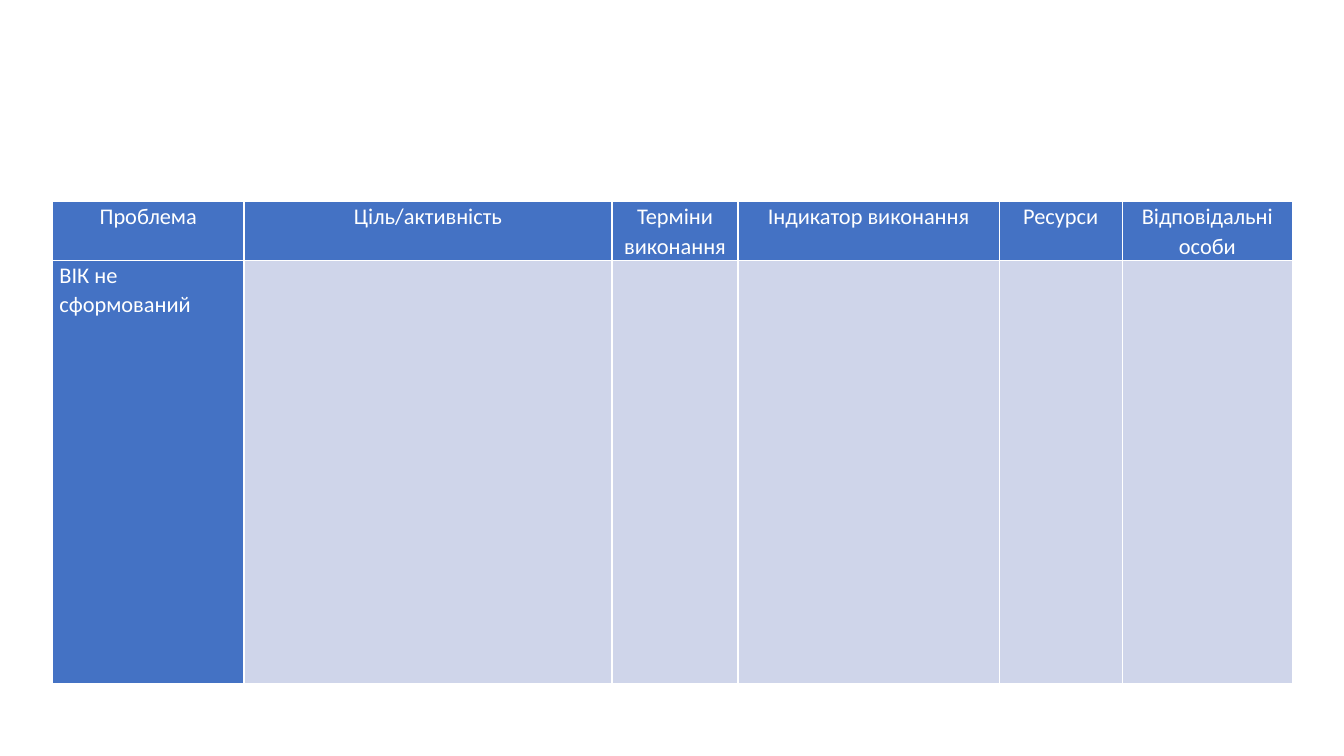
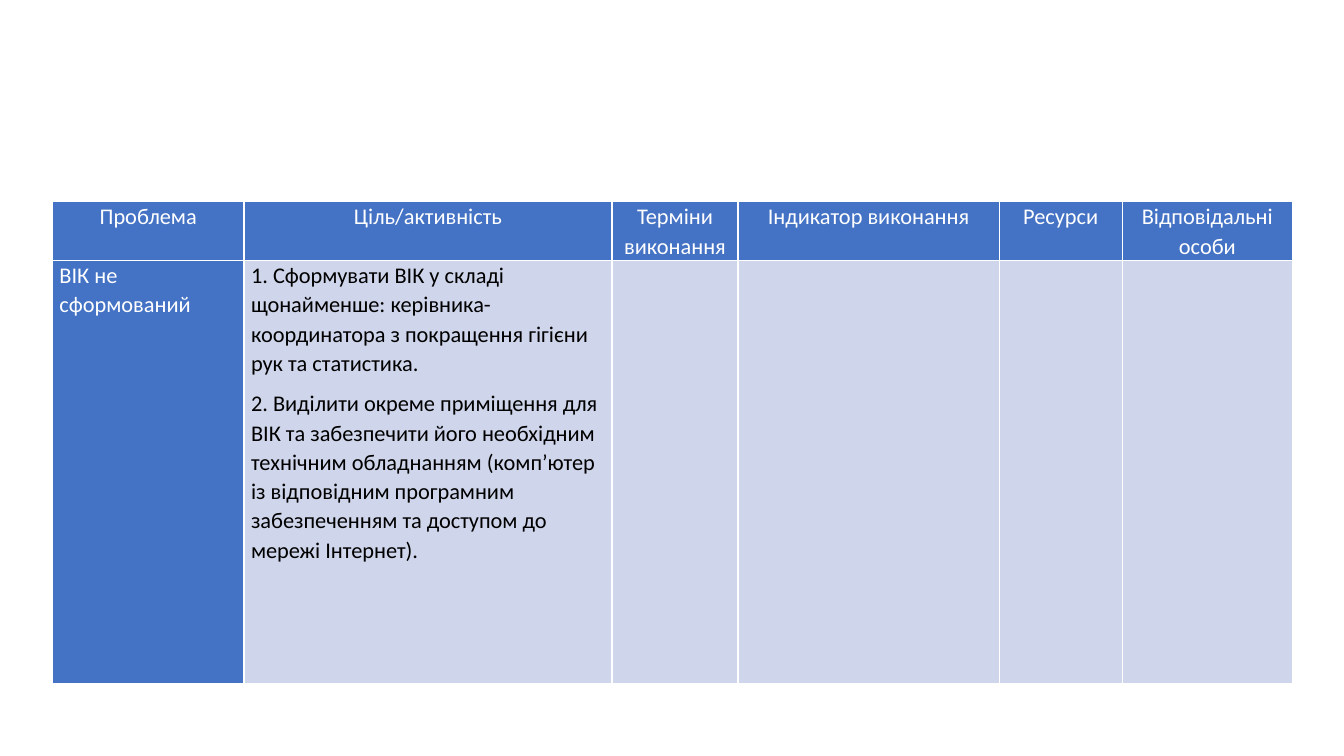
from lxml.etree import SubElement
from pptx import Presentation
from pptx.dml.color import RGBColor
from pptx.enum.text import PP_ALIGN
from pptx.oxml.ns import qn
from pptx.util import Inches, Pt

# Shared style
BLUE = RGBColor(0x44, 0x72, 0xC4)
PALE = RGBColor(0xCF, 0xD5, 0xEA)
WHITE = RGBColor(0xFF, 0xFF, 0xFF)
BLACK = RGBColor(0, 0, 0)
FONT, SIZE = "Calibri", Pt(16)
LEFT, TOP = 0.52, 2
ROW_HEIGHTS = (0.56, 4.2)

# Content: (heading, column width)
COLUMNS = [
    ("Проблема", 1.9),
    ("Ціль/активність", 3.65),
    ("Терміни виконання", 1.25),
    ("Індикатор виконання", 2.59),
    ("Ресурси", 1.22),
    ("Відповідальні особи", 1.69),
]
PROBLEM = "ВІК не сформований"
ACTIVITIES = [
    "1. Сформувати ВІК у складі щонайменше: керівника-координатора "
    "з покращення гігієни рук та статистика.",
    "2. Виділити окреме приміщення для ВІК та забезпечити його необхідним "
    "технічним обладнанням (комп’ютер із відповідним програмним "
    "забезпеченням та доступом до мережі Інтернет).",
]
# Activities shown on each slide
SLIDES = [[], ACTIVITIES]


def add_borders(cell):
    tc_pr = cell._tc.get_or_add_tcPr()
    for side in ("a:lnL", "a:lnR", "a:lnT", "a:lnB"):
        ln = SubElement(tc_pr, qn(side), w=str(Pt(1)))
        fill = SubElement(ln, qn("a:solidFill"))
        SubElement(fill, qn("a:srgbClr"), val=str(WHITE))


def fill_cell(cell, lines, fill, color, align):
    add_borders(cell)
    cell.fill.solid()
    cell.fill.fore_color.rgb = fill
    cell.margin_left = cell.margin_right = Inches(0.07)
    cell.margin_top = cell.margin_bottom = 0
    tf = cell.text_frame
    tf.text = "\n".join(lines)
    for p in tf.paragraphs:
        p.alignment = align
        p.line_spacing = 1.07
        p.space_after = Pt(8)
        p.font.name, p.font.size = FONT, SIZE
        p.font.color.rgb = color


def add_plan(prs, activities):
    s = prs.slides.add_slide(prs.slide_layouts[6])
    width = sum(w for _, w in COLUMNS)
    table = s.shapes.add_table(
        len(ROW_HEIGHTS), len(COLUMNS), Inches(LEFT), Inches(TOP),
        Inches(width), Inches(sum(ROW_HEIGHTS))).table
    table.first_row = table.horz_banding = False
    for row, height in zip(table.rows, ROW_HEIGHTS):
        row.height = Inches(height)

    # Heading above, problem and activities below
    body = {0: [PROBLEM], 1: activities}
    for c, (heading, w) in enumerate(COLUMNS):
        table.columns[c].width = Inches(w)
        fill_cell(table.cell(0, c), [heading], BLUE, WHITE, PP_ALIGN.CENTER)
        fill, color = (BLUE, WHITE) if c == 0 else (PALE, BLACK)
        fill_cell(table.cell(1, c), body.get(c, []), fill, color, PP_ALIGN.LEFT)


def main():
    prs = Presentation()
    prs.slide_width, prs.slide_height = Inches(13.33), Inches(7.5)
    for activities in SLIDES:
        add_plan(prs, activities)
    prs.save("out.pptx")


if __name__ == "__main__":
    main()
